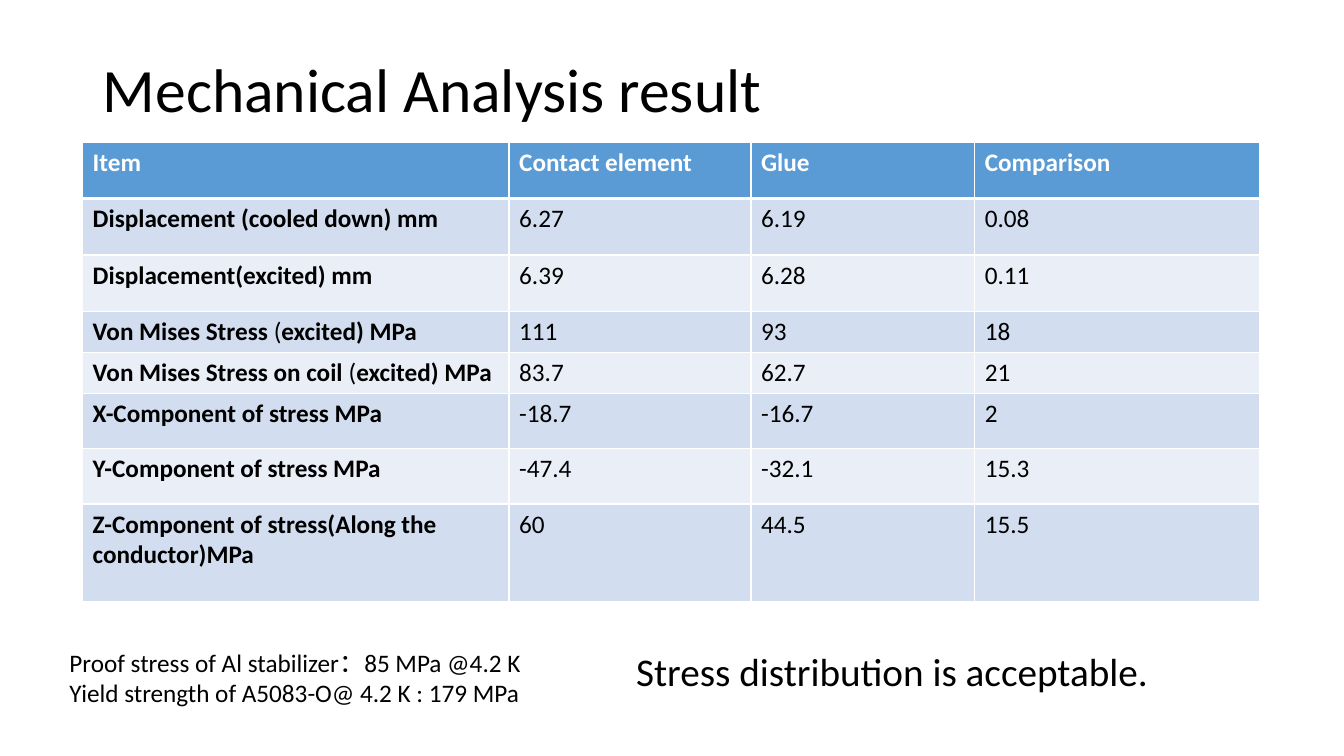
import pptx
import pptx.util
import pptx.dml.color
import pptx.enum.text
import pptx.oxml
import pptx.oxml.ns

RGBColor = pptx.dml.color.RGBColor
BLACK = RGBColor(0, 0, 0)
WHITE = RGBColor(255, 255, 255)
BLUE = RGBColor(0x5B, 0x9B, 0xD5)
BANDS = (RGBColor(0xEA, 0xEF, 0xF7), RGBColor(0xD2, 0xDE, 0xEF))
FONT = "Calibri"
WIDE = pptx.util.Inches(13.33)
HIGH = pptx.util.Inches(7.5)

COLS = (31.73, 18, 16.65, 21.23)
HEADS = ("Item", "Contact element", "Glue", "Comparison")
ROWS = (
    (7.47, ("Displacement (cooled down) mm",), "6.27", "6.19", "0.08"),
    (7.47, ("Displacement(excited) mm",), "6.39", "6.28", "0.11"),
    (3.73, ("Von Mises Stress", " (", "excited) MPa"), "111", "93", "18"),
    (3.73, ("Von Mises Stress on coil", " (", "excited) MPa"), "83.7", "62.7", "21"),
    (7.33, ("X-Component of stress MPa",), "-18.7", "-16.7", "2"),
    (7.33, ("Y-Component of stress MPa",), "-47.4", "-32.1", "15.3"),
    (12.93, ("Z-Component of stress(Along the conductor)MPa",), "60", "44.5", "15.5"),
)


def across(share):
    """Turn a percentage of the slide width into a length."""
    return round(WIDE * share / 100)


def down(share):
    """Turn a percentage of the slide height into a length."""
    return round(HIGH * share / 100)


def place(left, top, width, height):
    """Turn percentages of the slide into a position and a size."""
    return across(left), down(top), across(width), down(height)


def write(para, text, size, color=BLACK, bold=False):
    """Add one formatted run to a paragraph."""
    run = para.add_run()
    run.text = text
    run.font.name = FONT
    run.font.size = pptx.util.Pt(size)
    run.font.bold = bold
    run.font.color.rgb = color


def add_title(slide, text):
    """Move and fill the title placeholder."""
    title = slide.shapes.title
    title.left, title.top, title.width, title.height = place(6.9, 5.33, 86.27, 13.73)
    frame = title.text_frame
    frame.vertical_anchor = pptx.enum.text.MSO_ANCHOR.MIDDLE
    para = frame.paragraphs[0]
    para.alignment = pptx.enum.text.PP_ALIGN.LEFT
    para.line_spacing = 0.9
    write(para, text, 44)


def add_note(slide, box, lines, size):
    """Add a text box with one paragraph for each line."""
    frame = slide.shapes.add_textbox(*place(*box)).text_frame
    frame.word_wrap = True
    for index, line in enumerate(lines):
        para = frame.add_paragraph() if index else frame.paragraphs[0]
        write(para, line, size)


def edge(cell, side, width):
    """Draw a white border on one side of a cell."""
    space = pptx.oxml.ns.nsdecls("a")
    line = pptx.oxml.parse_xml(
        f'<a:{side} {space} w="{pptx.util.Pt(width)}"><a:solidFill>'
        f'<a:srgbClr val="{WHITE}"/></a:solidFill></a:{side}>'
    )
    cell._tc.get_or_add_tcPr().append(line)


def fill_cell(cell, parts, back, color, bold, base):
    """Write the parts of a cell, every second one in regular weight."""
    for index, part in enumerate(parts):
        write(cell.text_frame.paragraphs[0], part, 18, color, bold and index % 2 == 0)
    for side, width in (("lnL", 1), ("lnR", 1), ("lnT", 1), ("lnB", base)):
        edge(cell, side, width)
    cell.fill.solid()
    cell.fill.fore_color.rgb = back


def add_grid(slide):
    """Add the table of results."""
    box = place(6.15, 18.8, sum(COLS), 57.46)
    table = slide.shapes.add_table(len(ROWS) + 1, len(COLS), *box).table
    for column, share in zip(table.columns, COLS):
        column.width = across(share)
    table.rows[0].height = down(7.47)
    for col, head in enumerate(HEADS):
        fill_cell(table.cell(0, col), (head,), BLUE, WHITE, True, 3)
    for row, (share, label, *values) in enumerate(ROWS, 1):
        table.rows[row].height = down(share)
        back = BANDS[row % 2]
        fill_cell(table.cell(row, 0), label, back, BLACK, True, 1)
        for col, value in enumerate(values, 1):
            fill_cell(table.cell(row, col), (value,), back, BLACK, False, 1)


def main():
    """Build the slide and save it."""
    deck = pptx.Presentation()
    deck.slide_width, deck.slide_height = WIDE, HIGH
    slide = deck.slides.add_slide(deck.slide_layouts[5])
    add_title(slide, "Mechanical Analysis result")
    add_grid(slide)
    facts = (
        "Proof stress of Al stabilizer：85 MPa @4.2 K",
        "Yield strength of A5083-O@ 4.2 K : 179 MPa",
    )
    add_note(slide, (4.43, 84.93, 38.26, 9.47), facts, 18)
    add_note(slide, (46.59, 84.93, 47.94, 7.6), ("Stress distribution is acceptable.",), 28)
    deck.save("out.pptx")


if __name__ == "__main__":
    main()
